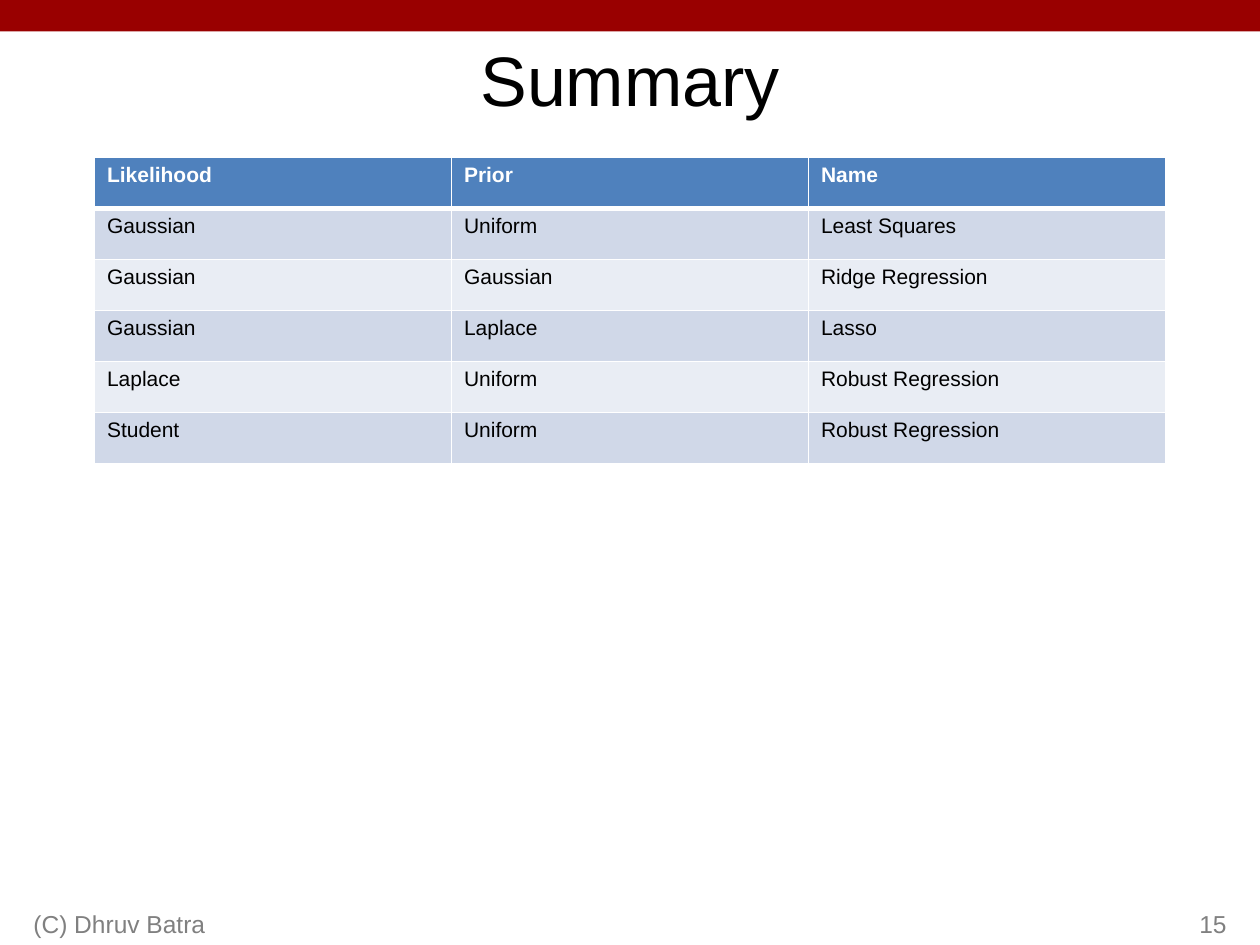
from dataclasses import dataclass

import pptx
import pptx.dml.color
import pptx.enum.shapes
import pptx.enum.text
import pptx.oxml
import pptx.oxml.ns
import pptx.util

Pt = pptx.util.Pt
Align = pptx.enum.text.PP_ALIGN
Anchor = pptx.enum.text.MSO_ANCHOR


@dataclass(frozen=True)
class Theme:
    font: str = "Arial"
    bar: str = "990000"
    header: str = "4F81BD"
    bands: tuple[str, str] = ("D0D8E8", "E9EDF4")
    white: str = "FFFFFF"
    black: str = "000000"
    grey: str = "808080"
    title_size: float = 40
    table_size: float = 12
    footer_size: float = 14


@dataclass(frozen=True)
class Box:
    left: float
    top: float
    width: float
    height: float

    def lengths(self) -> tuple:
        return tuple(Pt(value) for value in (self.left, self.top, self.width, self.height))


@dataclass(frozen=True)
class Footer:
    text: str
    box: Box
    align: Align


THEME = Theme()
SLIDE_BOX = Box(0, 0, 720, 540)
BAR_BOX = Box(0, 0, 720, 18)
TITLE_BOX = Box(54, 18, 612, 54)
TABLE_BOX = Box(54, 90, 612, 175)
ROWS = (
    ("Likelihood", "Prior", "Name"),
    ("Gaussian", "Uniform", "Least Squares"),
    ("Gaussian", "Gaussian", "Ridge Regression"),
    ("Gaussian", "Laplace", "Lasso"),
    ("Laplace", "Uniform", "Robust Regression"),
    ("Student", "Uniform", "Robust Regression"),
)
FOOTERS = (
    Footer("(C) Dhruv Batra", Box(12, 504, 228, 36), Align.LEFT),
    Footer("15", Box(558, 504, 150, 36), Align.RIGHT),
)


def color(value: str) -> pptx.dml.color.RGBColor:
    return pptx.dml.color.RGBColor.from_string(value)


def write(frame, text: str, *, size: float, fill: str, bold: bool = False,
          align: Align = Align.LEFT) -> None:
    paragraph = frame.paragraphs[0]
    paragraph.alignment = align
    run = paragraph.add_run()
    run.text = text
    run.font.name = THEME.font
    run.font.size = Pt(size)
    run.font.bold = bold
    run.font.color.rgb = color(fill)


def draw_bar(slide) -> None:
    shape = slide.shapes.add_shape(
        pptx.enum.shapes.MSO_SHAPE.RECTANGLE, *BAR_BOX.lengths())
    shape.shadow.inherit = False
    shape.fill.solid()
    shape.fill.fore_color.rgb = color(THEME.bar)
    shape.line.fill.background()


def draw_title(slide, text: str) -> None:
    title = slide.shapes.title
    title.left, title.top, title.width, title.height = TITLE_BOX.lengths()
    title.text_frame.vertical_anchor = Anchor.MIDDLE
    write(title.text_frame, text, size=THEME.title_size, fill=THEME.black,
          align=Align.CENTER)


def set_borders(cell, widths: dict[str, float]) -> None:
    properties = cell._tc.get_or_add_tcPr()
    for side, width in widths.items():
        properties.append(pptx.oxml.parse_xml(
            f'<a:{side} {pptx.oxml.ns.nsdecls("a")} w="{Pt(width)}"><a:solidFill>'
            f'<a:srgbClr val="{THEME.white}"/></a:solidFill></a:{side}>'))


def draw_table(slide, rows: tuple) -> None:
    table = slide.shapes.add_table(
        len(rows), len(rows[0]), *TABLE_BOX.lengths()).table
    for row in table.rows:
        row.height = Pt(TABLE_BOX.height / len(rows))
    for row_index, texts in enumerate(rows):
        header = row_index == 0
        fill = THEME.header if header else THEME.bands[(row_index - 1) % 2]
        widths = {"lnL": 1, "lnR": 1, "lnT": 3 if row_index == 1 else 1,
                  "lnB": 3 if header else 1}
        for column_index, text in enumerate(texts):
            cell = table.cell(row_index, column_index)
            set_borders(cell, widths)
            cell.fill.solid()
            cell.fill.fore_color.rgb = color(fill)
            write(cell.text_frame, text, size=THEME.table_size, bold=header,
                  fill=THEME.white if header else THEME.black)


def draw_footer(slide, footer: Footer) -> None:
    frame = slide.shapes.add_textbox(*footer.box.lengths()).text_frame
    frame.word_wrap = True
    frame.vertical_anchor = Anchor.BOTTOM
    write(frame, footer.text, size=THEME.footer_size, fill=THEME.grey,
          align=footer.align)


def main() -> None:
    presentation = pptx.Presentation()
    presentation.slide_width = Pt(SLIDE_BOX.width)
    presentation.slide_height = Pt(SLIDE_BOX.height)
    slide = presentation.slides.add_slide(
        presentation.slide_layouts.get_by_name("Title Only"))
    draw_bar(slide)
    draw_title(slide, "Summary")
    draw_table(slide, ROWS)
    for footer in FOOTERS:
        draw_footer(slide, footer)
    presentation.save("out.pptx")


if __name__ == "__main__":
    main()
